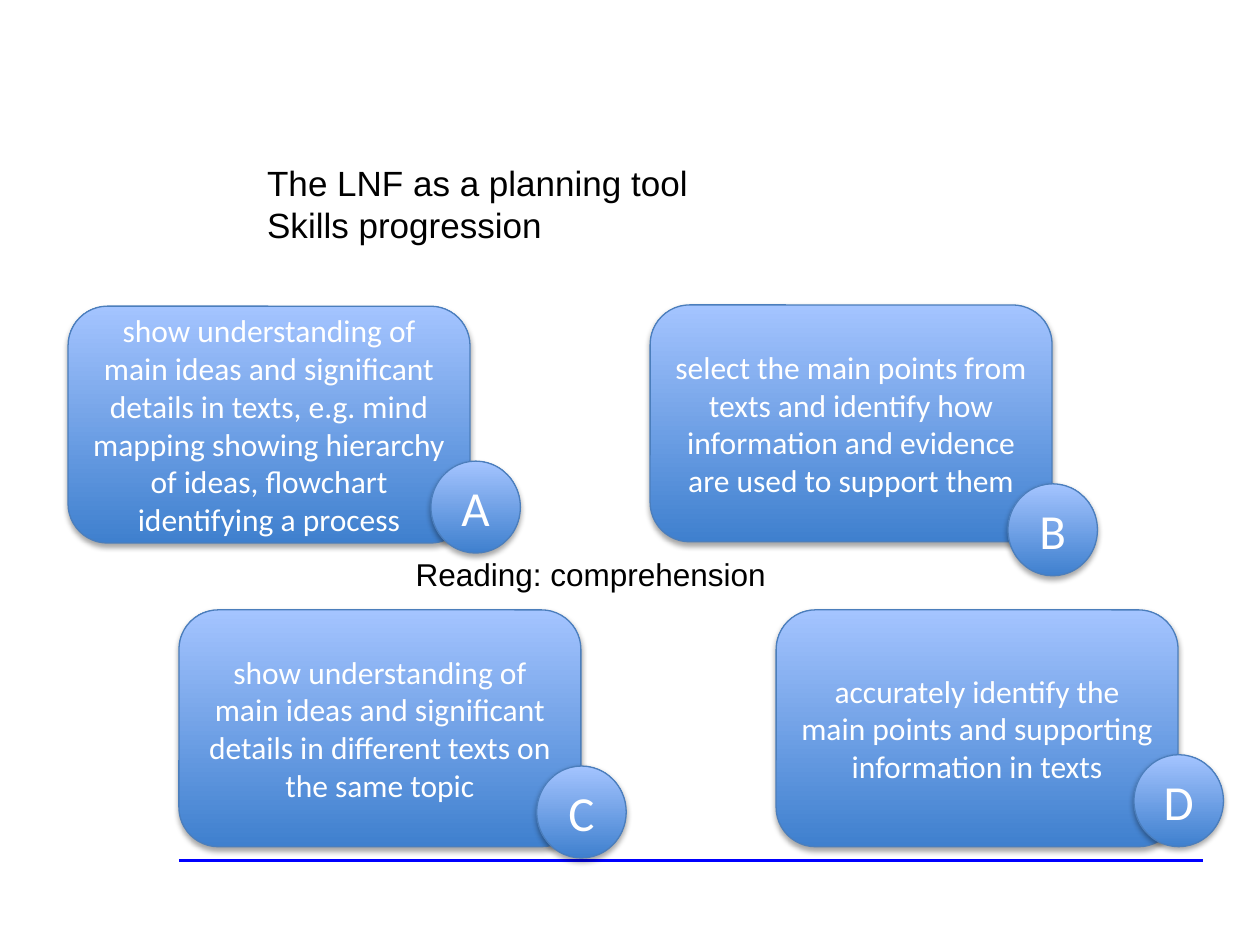
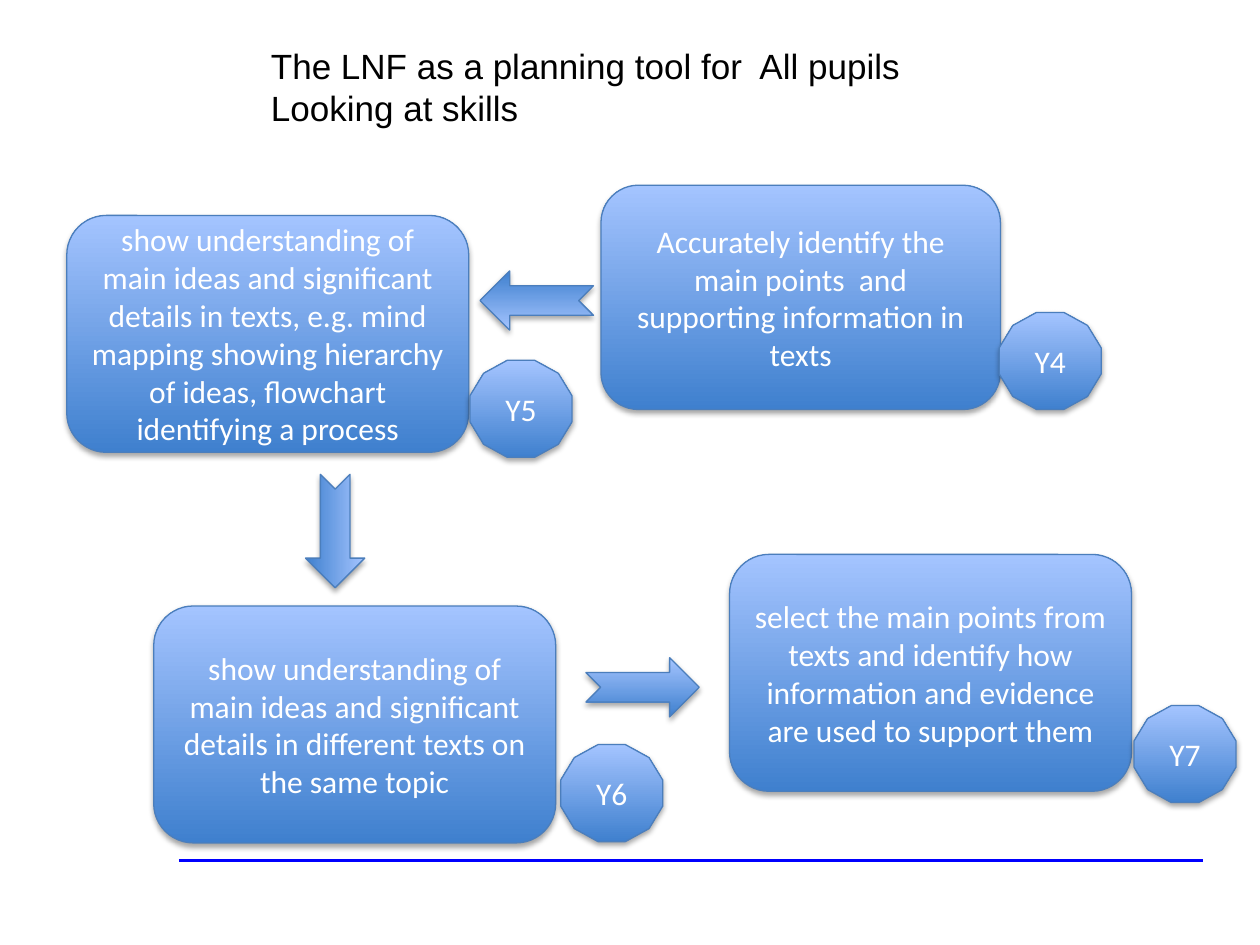
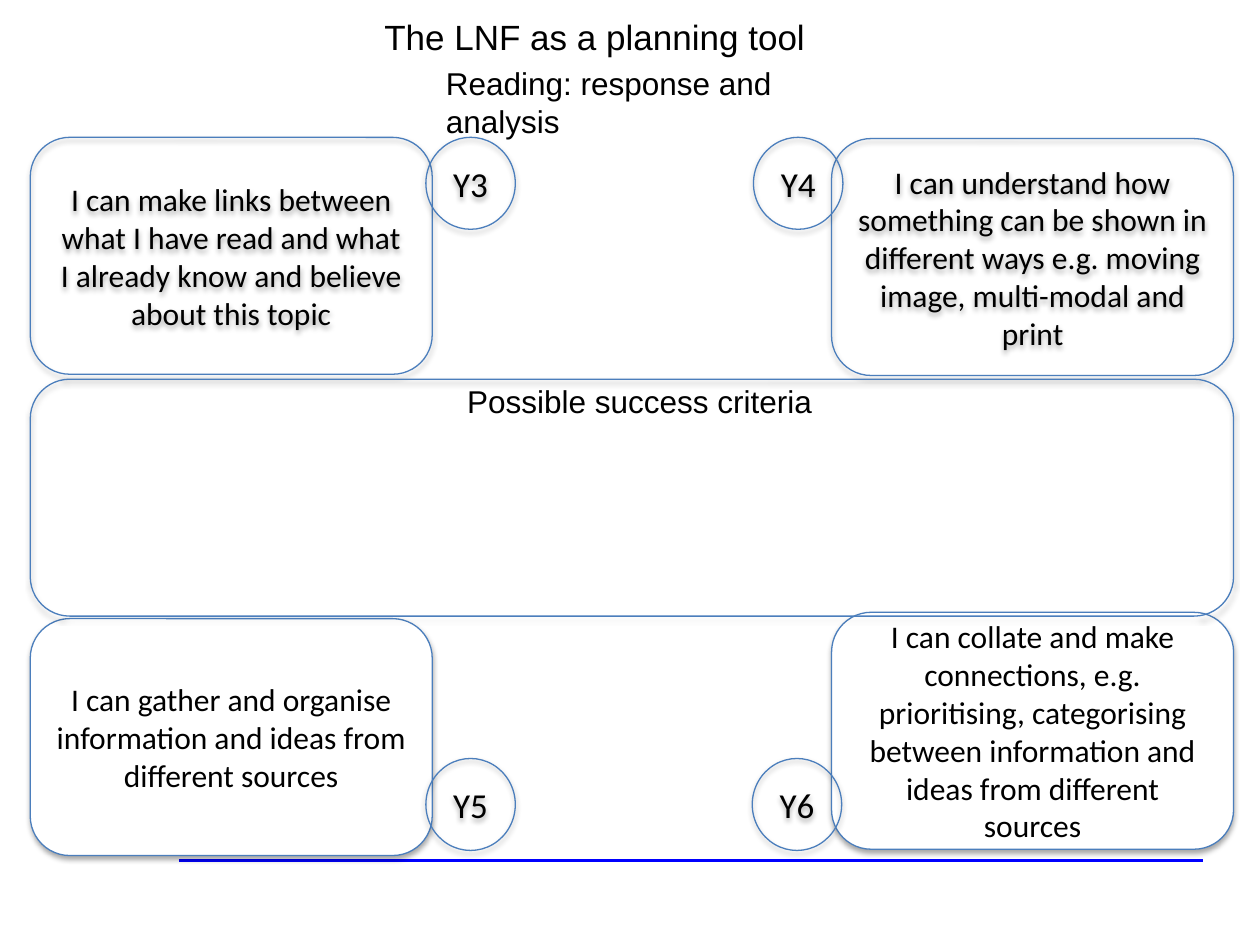
"""Build three slides on planning reading skills with the LNF."""
from lxml.etree import SubElement
from pptx import Presentation
from pptx.dml.color import RGBColor
from pptx.enum.shapes import MSO_CONNECTOR, MSO_SHAPE
from pptx.enum.text import MSO_ANCHOR, MSO_AUTO_SIZE, PP_ALIGN
from pptx.oxml.ns import qn
from pptx.util import Pt

PX = 9144
BLACK = RGBColor(0x00, 0x00, 0x00)
WHITE = RGBColor(0xFF, 0xFF, 0xFF)
RULE_BLUE = RGBColor(0x00, 0x00, 0xFF)
EDGE_BLUE = RGBColor(0x4B, 0x7E, 0xBC)
DEEP_BLUE = RGBColor(0x3F, 0x80, 0xCE)
PALE_BLUE = RGBColor(0xA4, 0xC4, 0xFF)

CARD = (319, 188)
CIRCLE = (71, 73)
BADGE = (81, 77)
ARROW = (90, 47)
SHADOW = {"blurRad": "40000", "dist": "23000", "dir": "5400000", "rotWithShape": "0"}

MIND_MAP = (
    "show understanding of main ideas and significant details in texts, "
    "e.g. mind mapping showing hierarchy of ideas, flowchart identifying a process"
)
SAME_TOPIC = (
    "show understanding of main ideas and significant details "
    "in different texts on the same topic"
)
SELECT = (
    "select the main points from texts and identify how information "
    "and evidence are used to support them"
)


def write(box, text, size, name="Arial", color=BLACK, align=PP_ALIGN.LEFT):
    """Fill a box with text in one format."""
    box.text_frame.text = text
    for para in box.text_frame.paragraphs:
        para.alignment = align
        for span in para.runs:
            span.font.color.rgb = color
            for key, value in {"size": Pt(size), "name": name}.items():
                setattr(span.font, key, value)


def add_figure(page, kind, place, extent, text="", size=18, fill=None, color=WHITE):
    """Add a shadowed shape, with the blue gradient unless a fill is named."""
    shape = page.shapes.add_shape(kind, *[n * PX for n in place + extent])
    if fill == "none":
        shape.fill.background()
    elif fill:
        shape.fill.solid()
        shape.fill.fore_color.rgb = fill
    else:
        shape.fill.gradient()
        shape.fill.gradient_angle = 90
        for stop, shade in zip(shape.fill.gradient_stops, (DEEP_BLUE, PALE_BLUE)):
            stop.color.rgb = shade
    shape.line.color.rgb = EDGE_BLUE
    shape.line.width = Pt(0.75)
    shape.shadow.inherit = False
    effects = shape._element.spPr.find(qn("a:effectLst"))
    shadow = SubElement(effects, qn("a:outerShdw"), SHADOW)
    tone = SubElement(shadow, qn("a:srgbClr"), val="000000")
    SubElement(tone, qn("a:alpha"), val="35000")
    if text:
        shape.text_frame.vertical_anchor = MSO_ANCHOR.MIDDLE
        write(shape, text, size, "Calibri", color, PP_ALIGN.CENTER)
    return shape


deck = Presentation()
deck.slide_width, deck.slide_height = 1000 * PX, 750 * PX

TITLE_FORMAT = {
    "margin_left": 0, "margin_top": 0, "margin_right": 0, "margin_bottom": 0,
    "word_wrap": False, "auto_size": MSO_AUTO_SIZE.NONE,
    "vertical_anchor": MSO_ANCHOR.TOP,
}
titles = [
    ("The LNF as a planning tool\nSkills progression", (212, 128, 653, 43)),
    ("The LNF as a planning tool for  All pupils\nLooking at skills", (215, 35, 653, 65)),
    ("The LNF as a planning tool", (305, 12, 480, 34)),
]
pages = []
for text, frame in titles:
    page = deck.slides.add_slide(deck.slide_layouts[5])
    title = page.shapes.title
    for key, value in zip(("left", "top", "width", "height"), frame):
        setattr(title, key, value * PX)
    for key, value in TITLE_FORMAT.items():
        setattr(title.text_frame, key, value)
    write(title, text, 20)
    rule = page.shapes.add_connector(
        MSO_CONNECTOR.STRAIGHT, 142 * PX, 683 * PX, 955 * PX, 683 * PX)
    rule.line.color.rgb = RULE_BLUE
    rule.line.width = Pt(1.5)
    SubElement(rule._element.spPr, qn("a:effectLst"))
    pages.append(page)
progression, sequence, response = pages

for place, text in [
    ((54, 243), MIND_MAP),
    ((142, 484), SAME_TOPIC),
    ((516, 242), SELECT),
    ((616, 484), "accurately identify the main points and supporting information in texts"),
]:
    add_figure(progression, MSO_SHAPE.ROUNDED_RECTANGLE, place, CARD, text)
for place, letter in [((900, 599), "D"), ((426, 608), "C"), ((800, 384), "B"), ((342, 366), "A")]:
    add_figure(progression, MSO_SHAPE.OVAL, place, CIRCLE, letter, 28)

for place, extent, text in [
    ((53, 171), CARD, MIND_MAP),
    ((122, 481), CARD, SAME_TOPIC),
    ((579, 440), CARD, SELECT),
    ((477, 147), (317, 178),
     "Accurately identify the main points  and supporting information in texts"),
]:
    add_figure(sequence, MSO_SHAPE.ROUNDED_RECTANGLE, place, extent, text)
for place, turn in [((221, 398), 90), ((381, 215), 180), ((465, 522), 0)]:
    arrow = add_figure(sequence, MSO_SHAPE.NOTCHED_RIGHT_ARROW, place, ARROW)
    arrow.rotation = turn
for place, year in [((373, 286), "Y5"), ((445, 591), "Y6"), ((793, 248), "Y4"), ((900, 560), "Y7")]:
    add_figure(sequence, MSO_SHAPE.DODECAGON, place, BADGE, year)

for place, fill, text in [
    ((660, 110), "none", "I can understand how something can be shown in different ways "
     "e.g. moving image, multi-modal and print"),
    ((24, 491), WHITE, "I can gather and organise information and ideas from different sources"),
    ((660, 486), WHITE, "I can collate and make connections, e.g. prioritising, categorising "
     "between information and ideas from different sources"),
    ((24, 109), "none", "I can make links between what I have read and what I already know "
     "and believe about this topic"),
]:
    add_figure(response, MSO_SHAPE.ROUNDED_RECTANGLE, place, CARD, text, 18, fill, BLACK)
for place, year in [((338, 109), "Y3"), ((597, 602), "Y6"), ((598, 109), "Y4"), ((338, 602), "Y5")]:
    add_figure(response, MSO_SHAPE.OVAL, place, CIRCLE, year, 20, "none", BLACK)
add_figure(response, MSO_SHAPE.ROUNDED_RECTANGLE, (24, 301), (955, 188), fill="none")

for page, frame, text, wrap in [
    (progression, (320, 436, 332, 40), "Reading: comprehension", True),
    (response, (344, 46, 332, 71), "Reading: response and analysis", True),
    (response, (361, 298, 297, 40), "Possible success criteria", False),
]:
    box = page.shapes.add_textbox(*[n * PX for n in frame])
    box.text_frame.word_wrap = wrap
    box.text_frame.auto_size = MSO_AUTO_SIZE.SHAPE_TO_FIT_TEXT
    write(box, text, 18)

deck.save("out.pptx")
